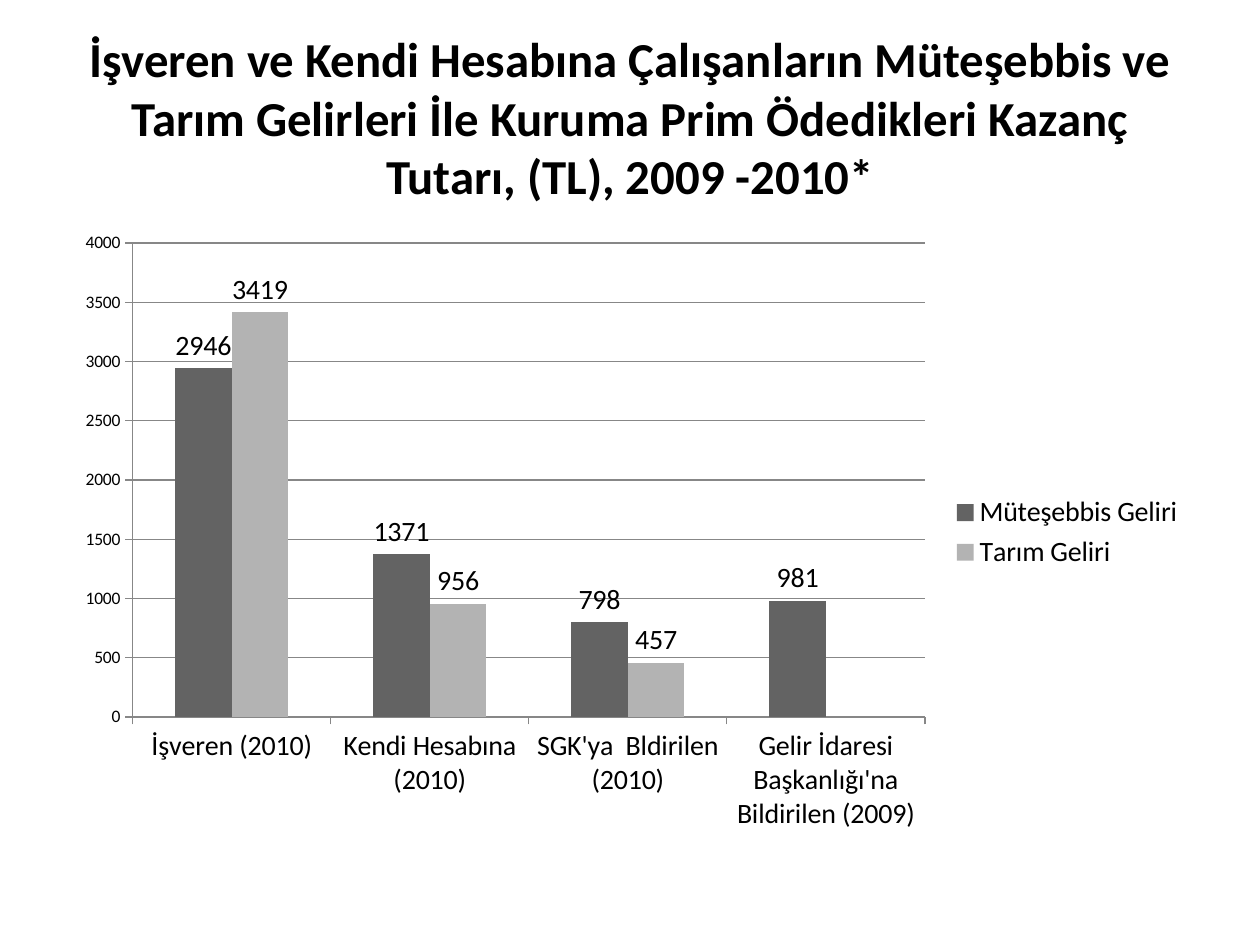
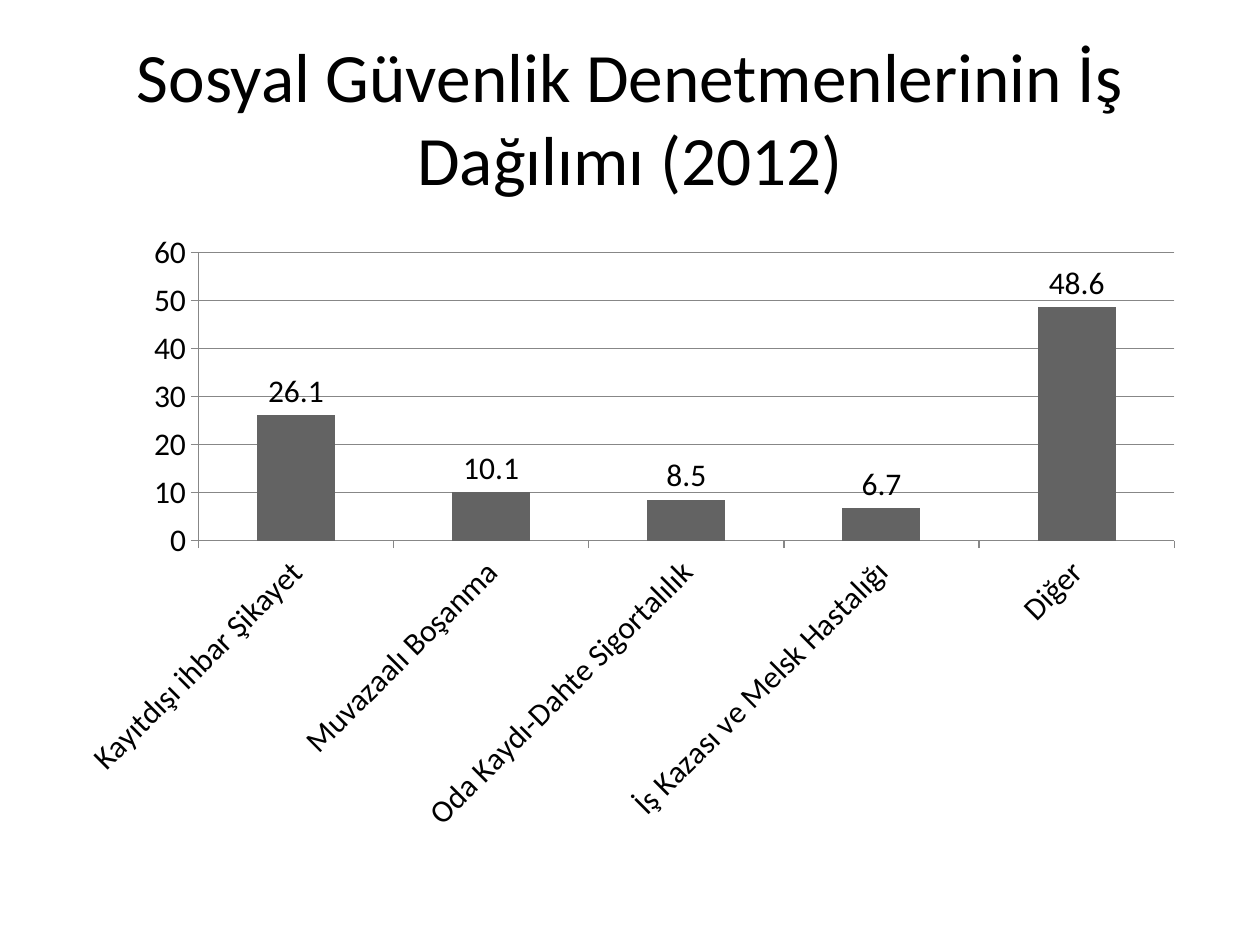
from dataclasses import dataclass

from pptx import Presentation
from pptx.chart.data import CategoryChartData as ChartData
from pptx.dml.color import RGBColor
from pptx.enum.chart import XL_CHART_TYPE as Kind
from pptx.enum.chart import XL_LABEL_POSITION as LabelPos
from pptx.enum.chart import XL_LEGEND_POSITION as LegendPos
from pptx.enum.chart import XL_TICK_MARK as Tick
from pptx.enum.text import MSO_ANCHOR as Anchor
from pptx.enum.text import MSO_AUTO_SIZE as Fit
from pptx.enum.text import PP_ALIGN as Align
from pptx.util import Cm, Pt

FONT = "Calibri"
BLACK = RGBColor(0x00, 0x00, 0x00)
LINE = RGBColor(0x87, 0x87, 0x87)
FILLS = (RGBColor(0x63, 0x63, 0x63), RGBColor(0xB3, 0xB3, 0xB3))
LEFT, WIDTH = Cm(1.27), Cm(22.86)


@dataclass(frozen=True)
class Page:
    title: str
    size: float
    bold: bool
    cats: tuple[str, ...]
    series: dict[str, tuple]
    text: int
    scale: int
    top: int
    step: int
    form: str
    legend: bool = False
    turn: int = 0


PAGES = (
    Page(
        title="İşveren ve Kendi Hesabına Çalışanların Müteşebbis ve Tarım "
              "Gelirleri İle Kuruma Prim Ödedikleri Kazanç Tutarı, (TL), 2009 -2010*",
        size=27.9, bold=True,
        cats=("İşveren (2010)", "Kendi Hesabına (2010)", "SGK'ya  Bldirilen (2010)",
              "Gelir İdaresi Başkanlığı'na Bildirilen (2009)"),
        series={"Müteşebbis Geliri": (2946, 1371, 798, 981),
                "Tarım Geliri": (3419, 956, 457, None)},
        text=16, scale=10, top=4000, step=500, form="0", legend=True,
    ),
    Page(
        title="Sosyal Güvenlik Denetmenlerinin İş Dağılımı (2012)",
        size=39.6, bold=False,
        cats=("Kayıtdışı ihbar Şikayet", "Muvazaalı Boşanma",
              "Oda Kaydı-Dahte Sigortalılık", "İş Kazası ve Melsk Hastalığı", "Diğer"),
        series={"Series 1": (26.1, 10.1, 8.5, 6.7, 48.6)},
        text=18, scale=18, top=60, step=10, form="General", turn=-45,
    ),
)


def style(font, size: float, bold: bool = False) -> None:
    font.name, font.size, font.bold = FONT, Pt(size), bold
    font.color.rgb = BLACK


def draw_line(line) -> None:
    line.color.rgb = LINE
    line.width = Pt(0.75)


def set_title(slide, page: Page) -> None:
    shape = slide.shapes.title
    shape.left, shape.top = LEFT, Cm(0.76)
    shape.width, shape.height = WIDTH, Cm(3.18)
    frame = shape.text_frame
    frame.word_wrap, frame.auto_size = True, Fit.NONE
    frame.vertical_anchor = Anchor.MIDDLE
    para = frame.paragraphs[0]
    para.alignment = Align.CENTER
    run = para.add_run()
    run.text = page.title
    style(run.font, page.size, page.bold)


def set_axes(chart, page: Page) -> None:
    base, scale = chart.category_axis, chart.value_axis
    for axis, size in ((base, page.text), (scale, page.scale)):
        axis.major_tick_mark, axis.minor_tick_mark = Tick.OUTSIDE, Tick.NONE
        style(axis.tick_labels.font, size)
        draw_line(axis.format.line)
    scale.minimum_scale, scale.maximum_scale = 0, page.top
    scale.major_unit = page.step
    scale.has_major_gridlines = True
    draw_line(scale.major_gridlines.format.line)
    scale.tick_labels.number_format = page.form
    scale.tick_labels.number_format_is_linked = False
    if page.turn:
        body = chart.element.xpath(".//c:catAx/c:txPr/a:bodyPr")[0]
        body.set("rot", str(page.turn * 60000))


def set_bars(plot, page: Page) -> None:
    plot.gap_width, plot.overlap, plot.vary_by_categories = 150, 0, False
    for bars, fill in zip(plot.series, FILLS):
        bars.format.fill.solid()
        bars.format.fill.fore_color.rgb = fill
        bars.invert_if_negative = False
        tags = bars.data_labels
        tags.show_value, tags.position = True, LabelPos.OUTSIDE_END
        tags.number_format, tags.number_format_is_linked = page.form, False
        style(tags.font, page.text)


def add_bars(slide, page: Page) -> None:
    data = ChartData()
    data.categories = page.cats
    for name, vals in page.series.items():
        data.add_series(name, vals)
    chart = slide.shapes.add_chart(
        Kind.COLUMN_CLUSTERED, LEFT, Cm(4.45), WIDTH, Cm(12.57), data).chart
    style(chart.font, 10)
    chart.has_title = False
    chart.has_legend = page.legend
    if page.legend:
        chart.legend.position = LegendPos.RIGHT
        chart.legend.include_in_layout = False
        style(chart.legend.font, page.text)
    set_axes(chart, page)
    set_bars(chart.plots[0], page)


def main() -> None:
    deck = Presentation()
    deck.slide_width, deck.slide_height = Cm(25.4), Cm(19.05)
    layout = deck.slide_layouts.get_by_name("Title Only")
    for page in PAGES:
        slide = deck.slides.add_slide(layout)
        set_title(slide, page)
        add_bars(slide, page)
    deck.save("out.pptx")


if __name__ == "__main__":
    main()
